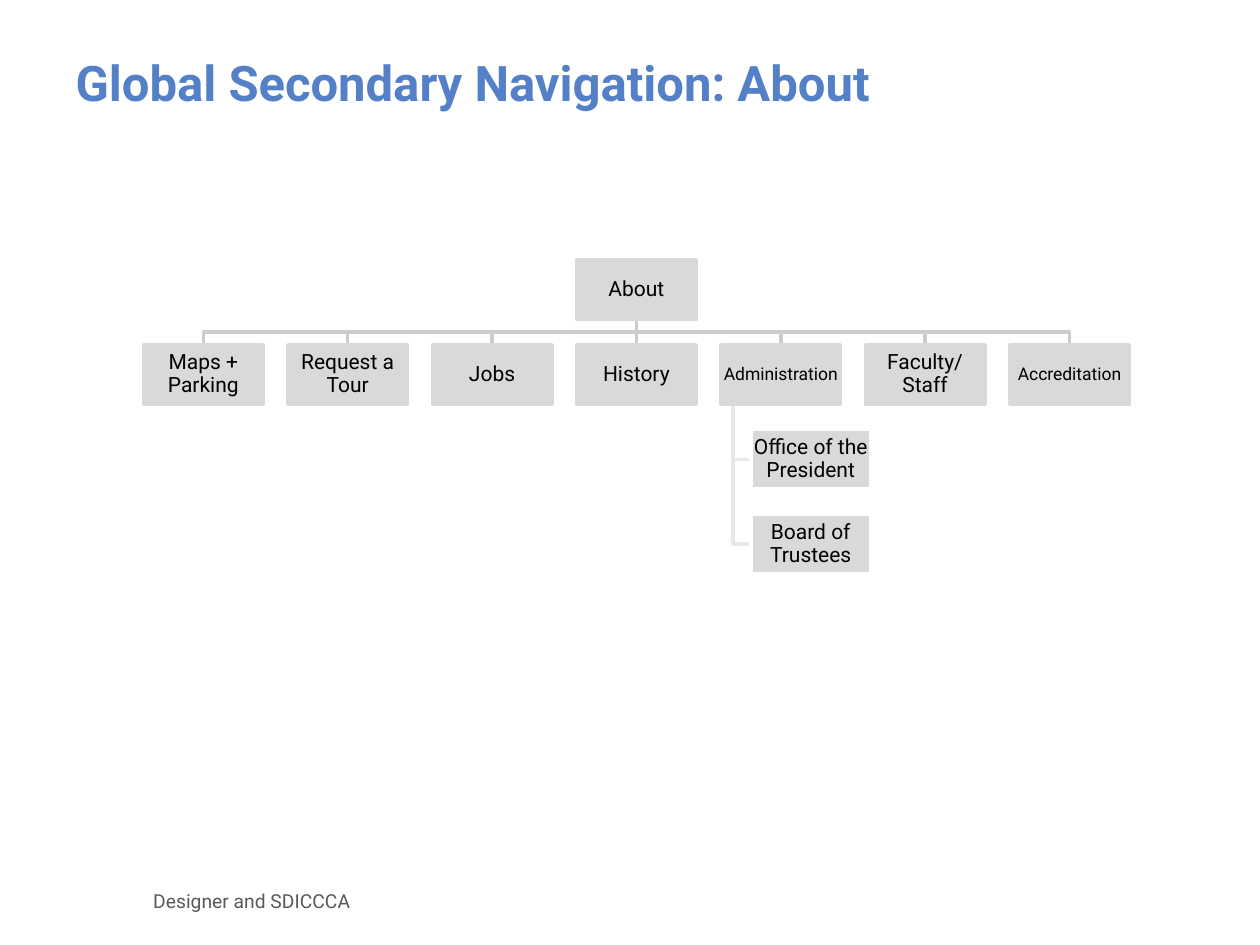
from lxml import etree
from pptx import Presentation
from pptx import util as u
from pptx.dml.color import RGBColor
from pptx.enum import shapes, text
from pptx.oxml.ns import qn

FONT = "Roboto"
GREY = "D9D9D9"
WIDE, HIGH = 2.41, 1.2      # box size, cm
STEP, DROP = 2.91, 1.71     # column and row pitch, cm
MID, TOP = 12.83, 5.24      # centre and top of the root box, cm
SUB = 15.14                 # left edge of the sub-pages, cm

# Page name and text size
PAGES = [("Maps + Parking", 12), ("Request a Tour", 12), ("Jobs", 12),
         ("History", 12), ("Administration", 10), ("Faculty/Staff", 12),
         ("Accreditation", 10)]
PARENT = 4                  # column that has sub-pages
SUBS = ["Office of the President", "Board of Trustees"]


def color(code):
    return RGBColor.from_string(code)


def style(font, size, code, bold=False):
    font.name = FONT
    font.size = u.Pt(size)
    font.bold = bold
    font.color.rgb = color(code)


def stroke(shape, code):
    shape.line.color.rgb = color(code)
    shape.line.width = u.Pt(2)


def add_box(slide, left, top, label, size=12, edge=GREY):
    box = slide.shapes.add_shape(shapes.MSO_SHAPE.RECTANGLE, u.Cm(left),
                                 u.Cm(top), u.Cm(WIDE), u.Cm(HIGH))
    box.shadow.inherit = False
    box.fill.solid()
    box.fill.fore_color.rgb = color(GREY)
    stroke(box, edge)
    frame = box.text_frame
    frame.word_wrap = True
    frame.vertical_anchor = text.MSO_ANCHOR.MIDDLE
    frame.margin_left = frame.margin_right = u.Cm(0.02)
    frame.margin_top = frame.margin_bottom = u.Cm(0.02)
    frame.text = label
    para = frame.paragraphs[0]
    para.alignment = text.PP_ALIGN.CENTER
    para.line_spacing = 0.9
    style(para.runs[0].font, size, "000000")


def add_elbow(slide, points, code):
    spots = [(u.Cm(x), u.Cm(y)) for x, y in points]
    pen = slide.shapes.build_freeform(*spots[0])
    pen.add_line_segments(spots[1:], close=False)
    elbow = pen.convert_to_shape()
    elbow.shadow.inherit = False
    elbow.fill.background()
    stroke(elbow, code)


def add_stem(slide, x, start, end, code):
    stem = slide.shapes.add_connector(shapes.MSO_CONNECTOR.STRAIGHT, u.Cm(x),
                                      u.Cm(start), u.Cm(x), u.Cm(end))
    stroke(stem, code)
    etree.SubElement(stem._element.spPr, qn("a:effectLst"))


def add_title(slide, label):
    title = slide.shapes.title
    title.left, title.top = u.Cm(1.27), u.Cm(0.76)
    title.width, title.height = u.Cm(22.86), u.Cm(1.8)
    frame = title.text_frame
    frame.text = label
    frame.auto_size = text.MSO_AUTO_SIZE.NONE
    frame.vertical_anchor = text.MSO_ANCHOR.MIDDLE
    para = frame.paragraphs[0]
    para.alignment = text.PP_ALIGN.LEFT
    style(para.runs[0].font, 28, "5480C7", True)


def add_footer(slide, label):
    foot = slide.shapes.add_textbox(u.Cm(2.84), u.Cm(17.65),
                                    u.Cm(12.45), u.Cm(1.02))
    frame = foot.text_frame
    frame.word_wrap = True
    frame.vertical_anchor = text.MSO_ANCHOR.MIDDLE
    frame.text = label
    style(frame.paragraphs[0].runs[0].font, 11, "595959")


def add_tree(slide):
    row = TOP + DROP
    base = TOP + HIGH
    bus = (base + row) / 2
    mids = [MID + (i - len(PAGES) // 2) * STEP for i in range(len(PAGES))]
    tops = [row + DROP * (i + 1) for i in range(len(SUBS))]

    # Lines from the root to each page
    for x in mids:
        if x == MID:
            add_stem(slide, x, base, row, "CCCCCC")
        else:
            add_elbow(slide, [(MID, base), (MID, bus), (x, bus), (x, row)],
                      "CCCCCC")

    # Lines from the parent page to its sub-pages
    spur = mids[PARENT] - 0.4 * WIDE
    for top in tops:
        y = top + HIGH / 2
        add_elbow(slide, [(spur, row + HIGH), (spur, y), (SUB, y)], "E7E7E7")

    # Boxes
    add_box(slide, MID - WIDE / 2, TOP, "About")
    for x, (label, size) in zip(mids, PAGES):
        add_box(slide, x - WIDE / 2, row, label, size)
    for top, label in zip(tops, SUBS):
        add_box(slide, SUB, top, label, edge="FFFFFF")


def main():
    deck = Presentation()
    deck.slide_width, deck.slide_height = u.Cm(25.4), u.Cm(19.05)
    slide = deck.slides.add_slide(deck.slide_layouts[5])
    add_tree(slide)
    add_title(slide, "Global Secondary Navigation: About")
    add_footer(slide, "Designer and SDICCCA")
    deck.save("out.pptx")


if __name__ == "__main__":
    main()
